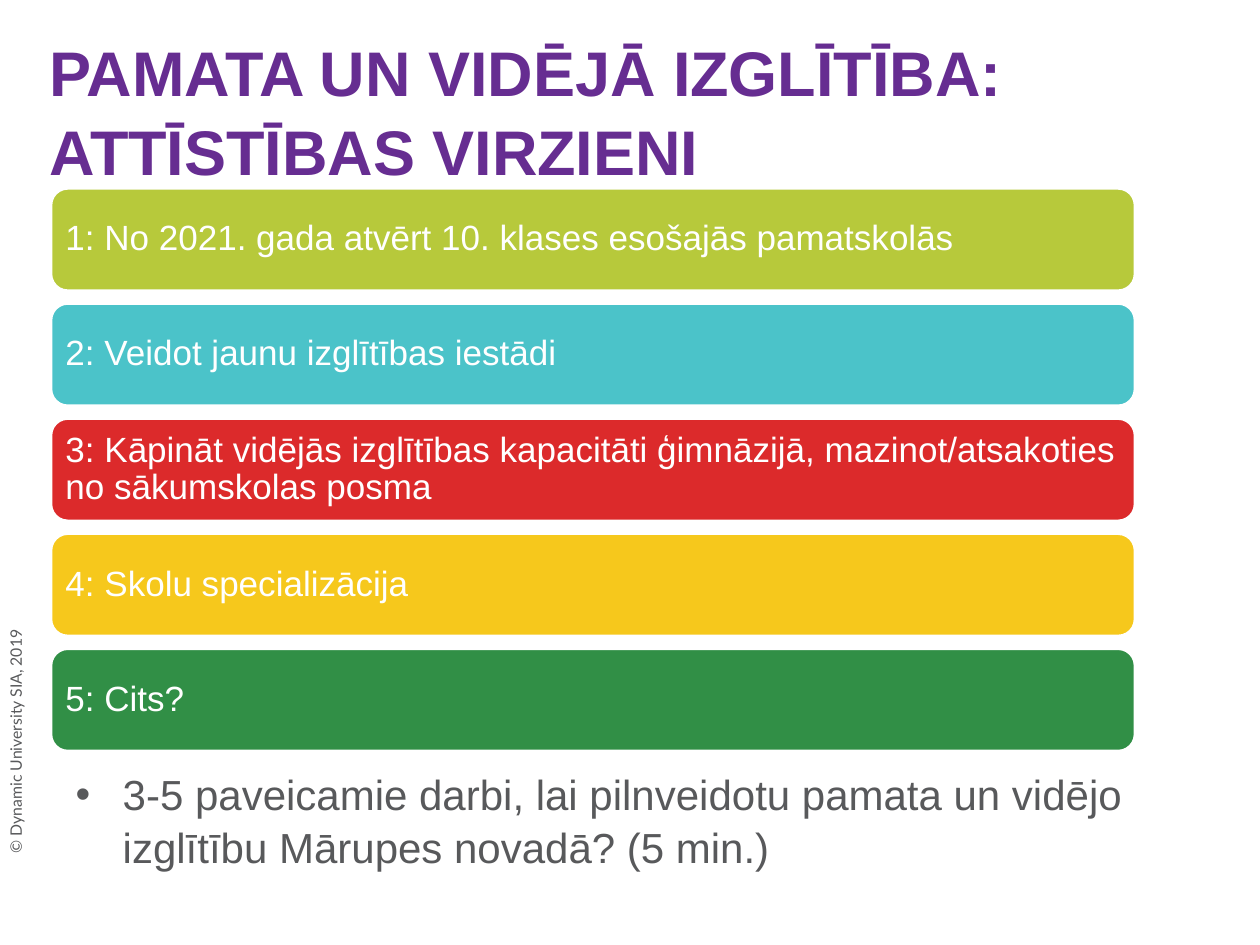
from dataclasses import dataclass

from lxml import etree
from pptx import Presentation
from pptx import util as u
from pptx.dml.color import RGBColor
from pptx.enum import shapes, text
from pptx.oxml.ns import qn


@dataclass(frozen=True)
class Theme:
    font: str = "Arial"
    note_font: str = "Lato"
    purple: str = "662D91"
    grey: str = "58595B"
    white: str = "FFFFFF"
    bars: tuple = ("B7C93B", "4BC3C9", "DC2A2B", "F6C81C", "318F46")
    title_size: int = 36
    body_size: int = 24
    bar_size: int = 20
    note_size: int = 9


class SlideBuilder:
    def __init__(self, slide, theme):
        self.slide = slide
        self.theme = theme

    def place(self, shape, left, top, width, height):
        box = dict(left=left, top=top, width=width, height=height)
        for name, value in box.items():
            setattr(shape, name, u.Cm(value))

    def set_words(self, shape, words, size, color, spacing=1.0, bold=False,
                  font=None, anchor=text.MSO_ANCHOR.MIDDLE, bullet_indent=None):
        frame = shape.text_frame
        frame.text = words
        paragraph = frame.paragraphs[0]
        if bullet_indent:
            self.add_bullet(paragraph, bullet_indent)
        formats = (
            (frame, dict(word_wrap=True, vertical_anchor=anchor,
                         auto_size=text.MSO_AUTO_SIZE.NONE)),
            (paragraph, dict(alignment=text.PP_ALIGN.LEFT, line_spacing=spacing,
                             space_before=u.Pt(0))),
            (paragraph.font, dict(name=font or self.theme.font, size=u.Pt(size),
                                  bold=bold)),
        )
        for target, values in formats:
            for name, value in values.items():
                setattr(target, name, value)
        paragraph.font.color.rgb = RGBColor.from_string(color)

    def add_bullet(self, paragraph, indent):
        properties = paragraph._p.get_or_add_pPr()
        properties.set("marL", str(u.Cm(indent)))
        properties.set("indent", str(-u.Cm(indent)))
        etree.SubElement(properties, qn("a:buFont")).set("typeface", self.theme.font)
        etree.SubElement(properties, qn("a:buChar")).set("char", "•")

    def title(self, words, *box):
        shape = self.slide.shapes.title
        self.place(shape, *box)
        self.set_words(shape, words, self.theme.title_size, self.theme.purple,
                       spacing=1.05, bold=True)

    def body(self, words, *box):
        shape = self.slide.placeholders[1]
        self.place(shape, *box)
        self.set_words(shape, words, self.theme.body_size, self.theme.grey,
                       spacing=1.05, anchor=text.MSO_ANCHOR.TOP, bullet_indent=0.95)

    def bar(self, words, color, *box):
        shape = self.slide.shapes.add_shape(
            shapes.MSO_SHAPE.ROUNDED_RECTANGLE, *map(u.Cm, box))
        shape.shadow.inherit = False
        shape.fill.solid()
        shape.fill.fore_color.rgb = RGBColor.from_string(color)
        shape.line.color.rgb = RGBColor.from_string(self.theme.white)
        shape.line.width = u.Pt(2)
        for side in ("left", "top", "right", "bottom"):
            setattr(shape.text_frame, f"margin_{side}", u.Cm(0.2))
        self.set_words(shape, words, self.theme.bar_size, self.theme.white, spacing=0.9)

    def side_note(self, words, *box):
        shape = self.slide.shapes.add_textbox(*map(u.Cm, box))
        shape.rotation = 270
        self.set_words(shape, words, self.theme.note_size, self.theme.grey,
                       font=self.theme.note_font, anchor=text.MSO_ANCHOR.TOP)


def main():
    presentation = Presentation()
    presentation.slide_width = u.Cm(25.4)
    presentation.slide_height = u.Cm(19.05)
    slide = presentation.slides.add_slide(presentation.slide_layouts[1])
    builder = SlideBuilder(slide, Theme())

    # Copyright line along the left edge
    builder.side_note("© Dynamic University SIA, 2019", -4.95, 11.86, 10.54, 0.64)

    # Title
    builder.title("PAMATA UN VIDĒJĀ IZGLĪTĪBA: ATTĪSTĪBAS VIRZIENI",
                  0.74, 0.61, 21.16, 3.18)

    # Development directions, numbered from the top
    directions = (
        "No 2021. gada atvērt 10. klases esošajās pamatskolās",
        "Veidot jaunu izglītības iestādi",
        "Kāpināt vidējās izglītības kapacitāti ģimnāzijā, "
        "mazinot/atsakoties no sākumskolas posma",
        "Skolu specializācija",
        "Cits?",
    )
    first_top, pitch = 3.79, 2.32
    for index, (words, color) in enumerate(zip(directions, builder.theme.bars)):
        builder.bar(f"{index + 1}: {words}", color,
                    1.02, first_top + index * pitch, 21.87, 2.08)

    # Task for the discussion
    builder.body("3-5 paveicamie darbi, lai pilnveidotu pamata un vidējo "
                 "izglītību Mārupes novadā? (5 min.)", 1.27, 15.32, 22.78, 2.16)

    presentation.save("out.pptx")


if __name__ == "__main__":
    main()
